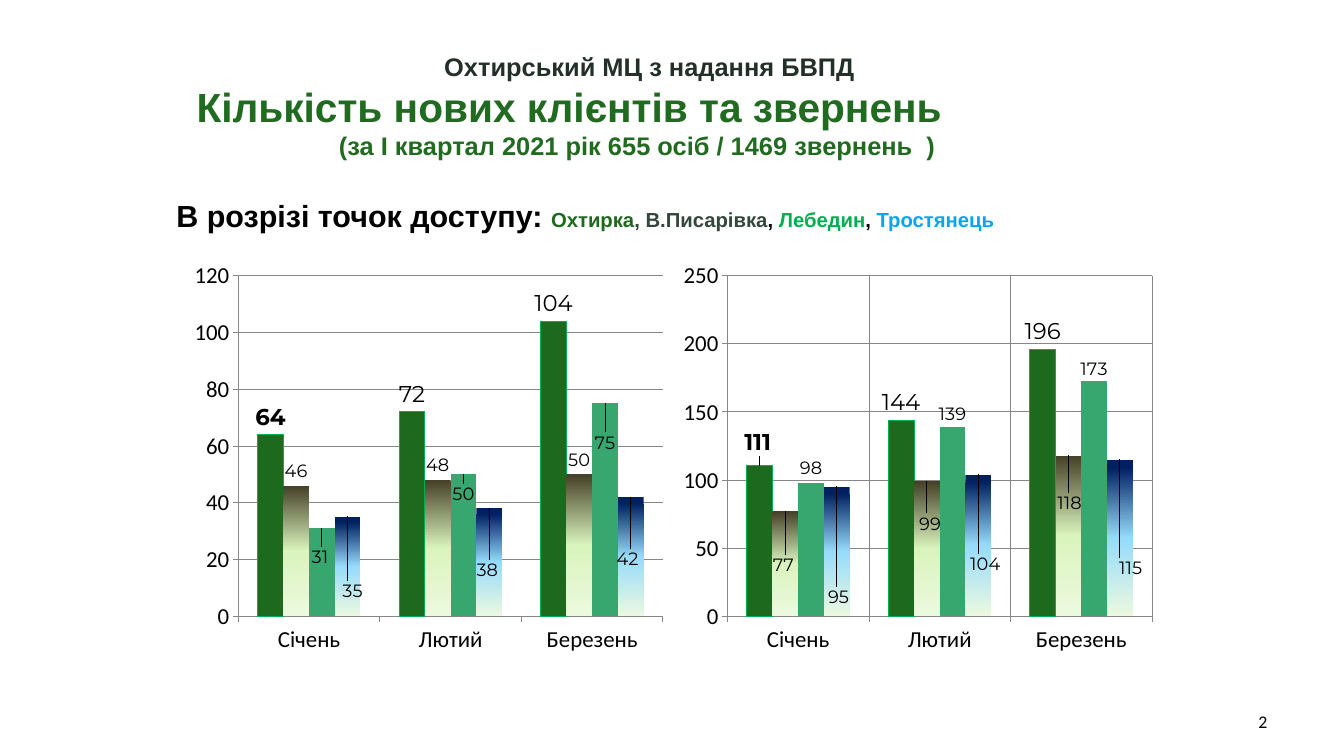
from dataclasses import dataclass

from lxml.etree import SubElement
from pptx import Presentation
from pptx.chart.data import CategoryChartData
from pptx.dml.color import RGBColor
from pptx.enum.chart import XL_CHART_TYPE as Chart, XL_LABEL_POSITION as LabelPos
from pptx.enum.chart import XL_TICK_MARK as Tick
from pptx.enum.text import MSO_ANCHOR as Anchor, PP_ALIGN as Align
from pptx.oxml.ns import qn
from pptx.util import Pt


@dataclass(frozen=True)
class Theme:
    # Fonts
    heading: str = "Arial"
    body: str = "Calibri"
    label: str = "Montserrat"
    # Type sizes
    title: int = 32
    subtitle: int = 20
    lead: int = 24
    places: int = 16
    axis: int = 18
    value: int = 14
    # Text colours
    black: str = "000000"
    slate: str = "223028"
    title_green: str = "216B20"
    # Place colours
    okhtyrka: str = "1D691D"
    pysarivka: str = "34473D"
    lebedyn: str = "00B050"
    trostianets: str = "08A5EF"
    # Chart colours
    grid: str = "878787"
    bar_green: str = "37A76F"
    olive_fade: tuple = ((0, "454027"), (50, "DAF4BD"), (100, "ECF9DF"))
    blue_fade: tuple = ((5, "002060"), (50, "97DBFB"), (100, "ECF9DF"))


def apply(obj, values):
    for name, value in values.items():
        setattr(obj, name, value)


class Deck:
    def __init__(self, theme, width, height):
        self.theme = theme
        self.prs = Presentation()
        apply(self.prs, {"slide_width": Pt(width), "slide_height": Pt(height)})
        self.slide = self.prs.slides.add_slide(self.prs.slide_layouts[6])

    def font(self, font, size, color, name, bold=False):
        apply(font, {"size": Pt(size), "name": name, "bold": bold})
        font.color.rgb = RGBColor.from_string(color)

    def line(self, line, color):
        line.color.rgb = RGBColor.from_string(color)
        line.width = Pt(0.75)

    def text(self, box, paragraphs, anchor, align=Align.LEFT, name=None, bold=True):
        """Each paragraph is (left indent, [(text, size, color), ...])."""
        tf = self.slide.shapes.add_textbox(*map(Pt, box)).text_frame
        apply(tf, {"word_wrap": True, "vertical_anchor": anchor,
                   "margin_left": Pt(7.9), "margin_right": Pt(7.9),
                   "margin_top": Pt(4.3), "margin_bottom": Pt(4.3)})
        for i, (indent, runs) in enumerate(paragraphs):
            p = tf.paragraphs[0] if i == 0 else tf.add_paragraph()
            p.alignment = align
            if indent:
                p._p.get_or_add_pPr().set("marL", str(Pt(indent)))
            for text, size, color in runs:
                r = p.add_run()
                r.text = text
                self.font(r.font, size, color, name or self.theme.heading, bold)

    def axis(self, axis, grid):
        apply(axis, {"major_tick_mark": Tick.OUTSIDE, "minor_tick_mark": Tick.NONE,
                     "has_major_gridlines": grid})
        self.line(axis.format.line, self.theme.grid)
        if grid:
            self.line(axis.major_gridlines.format.line, self.theme.grid)

    def fill(self, fill, color, series):
        if isinstance(color, str):
            fill.solid()
            fill.fore_color.rgb = RGBColor.from_string(color)
            return
        fill.gradient()
        fill.gradient_angle = 270
        stops = series._element.xpath("c:spPr/a:gradFill/a:gsLst")[0]
        stops.clear()
        for pos, rgb in color:
            stop = SubElement(stops, qn("a:gs"), pos=str(pos * 1000))
            SubElement(stop, qn("a:srgbClr"), val=rgb)

    def label(self, series, i, size, bold, shift):
        """Put a value above its bar, moved by shift (fractions of the chart)."""
        label = series.points[i].data_label
        self.font(label.font, size, self.theme.black, self.theme.label, bold)
        label.position = LabelPos.OUTSIDE_END
        if any(shift):
            d = series._element.xpath(f"c:dLbls/c:dLbl[c:idx/@val='{i}']")[0]
            layout = d.makeelement(qn("c:layout"))
            d.insert(1, layout)
            manual = SubElement(layout, qn("c:manualLayout"))
            for axis, value in zip("xy", shift):
                SubElement(manual, qn("c:" + axis), val=f"{value:.4f}")

    def chart(self, box, months, places, values, shifts, top, step, month_grid):
        t = self.theme
        data = CategoryChartData()
        data.categories = months
        for (name, _), row in zip(places, values):
            data.add_series(name, row)
        chart = self.slide.shapes.add_chart(
            Chart.COLUMN_CLUSTERED, *map(Pt, box), data).chart
        apply(chart, {"has_legend": False, "has_title": False})
        self.font(chart.font, t.axis, t.black, t.body)
        self.axis(chart.category_axis, month_grid)
        self.axis(chart.value_axis, True)
        apply(chart.value_axis, {"minimum_scale": 0, "maximum_scale": top,
                                 "major_unit": step})
        plot = chart.plots[0]
        apply(plot, {"gap_width": 150, "overlap": 0, "vary_by_categories": False})

        # Fixed inner plot area
        area = plot._element.getparent()
        for old in area.findall(qn("c:layout")):
            area.remove(old)
        layout = area.makeelement(qn("c:layout"))
        area.insert(0, layout)
        manual = SubElement(layout, qn("c:manualLayout"))
        for tag, value in (("layoutTarget", "inner"), ("xMode", "edge"),
                           ("yMode", "edge"), ("x", "0.1"), ("y", "0.083"),
                           ("w", "0.9"), ("h", "0.782")):
            SubElement(manual, qn("c:" + tag), val=value)

        # Bars and their values
        for n, (series, (_, color)) in enumerate(zip(plot.series, places)):
            series.invert_if_negative = False
            self.fill(series.format.fill, color, series)
            if n == 0:
                self.line(series.format.line, t.lebedyn)
            for i in range(len(months)):
                dx, dy = shifts.get((n, i), (0, 0))
                self.label(series, i, t.value if n else t.axis, n == i == 0,
                           (dx / box[2], dy / box[3]))


def main():
    t = Theme()
    deck = Deck(t, 1058.4, 595.44)

    # Title
    deck.text((146.9, 33.8, 757.4, 99.4), [
        (195, [("Охтирський МЦ з надання БВПД", t.subtitle, t.slate)]),
        (0, [("Кількість нових клієнтів та звернень", t.title, t.title_green)]),
        (112, [("(за І квартал 2021 рік 655 осіб / 1469 звернень  )",
                t.subtitle, t.title_green)]),
    ], Anchor.MIDDLE)

    # Access points, coloured as a legend
    deck.text((131, 133.2, 776.9, 55.4), [(0, [
        ("В розрізі точок доступу: ", t.lead, t.black),
        ("Охтирка", t.places, t.okhtyrka),
        (", В.Писарівка", t.places, t.pysarivka),
        (", ", t.places, t.black),
        ("Лебедин", t.places, t.lebedyn),
        (", ", t.places, t.black),
        ("Тростянець", t.places, t.trostianets),
    ])], Anchor.BOTTOM)

    # Slide number
    deck.text((758.9, 552.2, 247, 31.7), [(0, [("2", t.value, t.black)])],
              Anchor.MIDDLE, Align.RIGHT, t.body, False)

    # New clients and requests; label shifts are keyed by (place, month)
    months = ("Січень", "Лютий", "Березень")
    places = (("Охтирка", t.okhtyrka), ("В.Писарівка", t.olive_fade),
              ("Лебедин", t.bar_green), ("Тростянець", t.blue_fade))
    clients = ((64, 72, 104), (46, 48, 50), (31, 50, 75), (35, 38, 42))
    requests = ((111, 144, 196), (77, 99, 118), (98, 139, 173), (95, 104, 115))
    client_shifts = {(2, 0): (-1.5, 34), (2, 1): (0, 27.5), (2, 2): (0, 42.5),
                     (3, 0): (4, 70), (3, 1): (-1.5, 60.5), (3, 2): (-2.5, 60.5)}
    request_shifts = {(0, 0): (-1.5, -4), (1, 0): (-1.5, 54), (1, 1): (2.5, 45),
                      (1, 2): (1, 49.5), (2, 1): (0, 1.5), (2, 2): (0, 3),
                      (3, 0): (1.5, 98.5), (3, 1): (5.5, 82.5), (3, 2): (8.5, 97)}
    for left, values, shifts, top, step, month_grid in (
            (150.5, clients, client_shifts, 120, 20, False),
            (535.7, requests, request_shifts, 250, 50, True)):
        deck.chart((left, 188.6, 372, 343.4), months, places, values, shifts,
                   top, step, month_grid)

    deck.prs.save("out.pptx")


if __name__ == "__main__":
    main()
